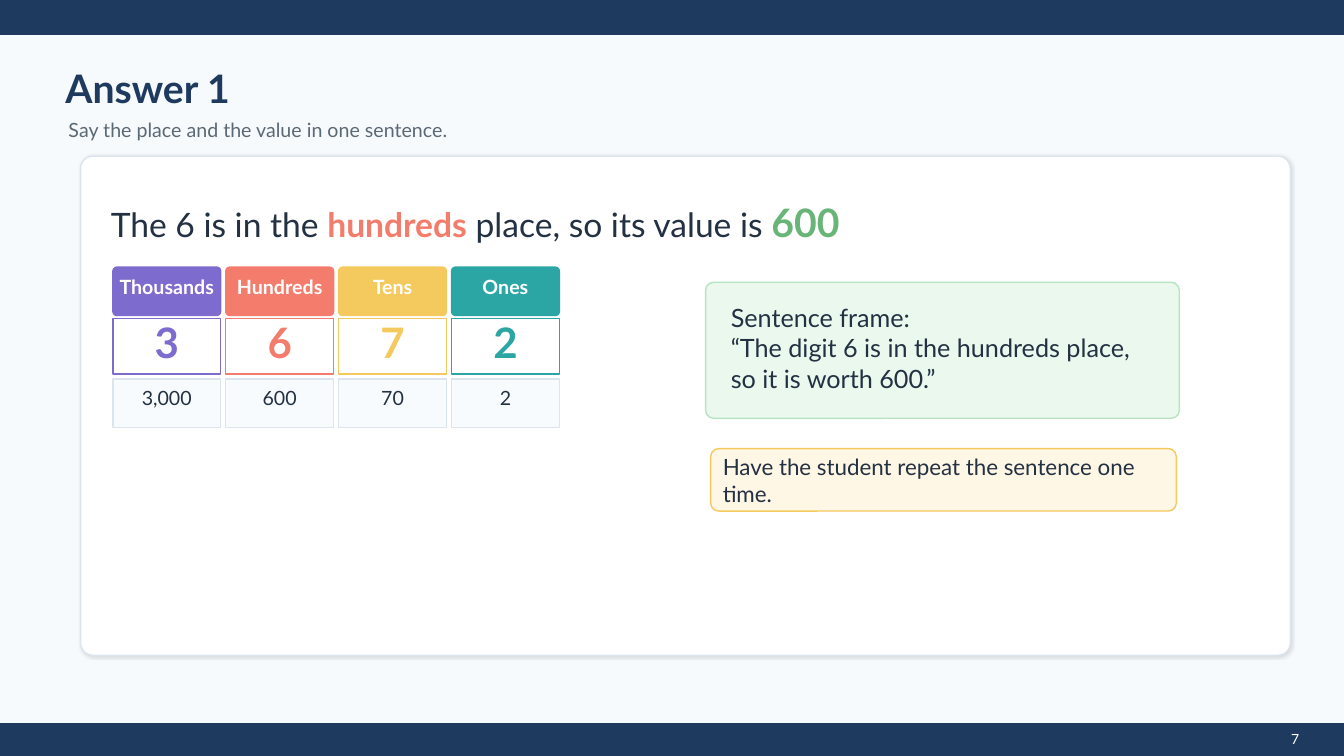
from dataclasses import dataclass

from lxml import etree
from pptx import Presentation
from pptx.dml.color import RGBColor
from pptx.enum.shapes import MSO_SHAPE
from pptx.enum.text import MSO_ANCHOR, PP_ALIGN
from pptx.oxml.ns import qn
from pptx.util import Inches, Pt

RECT, ROUND = MSO_SHAPE.RECTANGLE, MSO_SHAPE.ROUNDED_RECTANGLE
TOP, MIDDLE = MSO_ANCHOR.TOP, MSO_ANCHOR.MIDDLE
LEFT, CENTER = PP_ALIGN.LEFT, PP_ALIGN.CENTER

CELL = Inches(0.1)
COLS, ROWS = 133.33, 75
NAVY, INK, GRAY, WHITE = "1F3A5F", "233142", "5B6975", "FFFFFF"
EDGE, GREEN, CORAL, YELLOW = "DCE5EE", "69B578", "F47C6C", "F4C95D"


@dataclass(frozen=True)
class Box:
    col: float
    row: float
    cols: float
    rows: float

    def emu(self) -> list[int]:
        return [round(n * CELL) for n in (self.col, self.row, self.cols, self.rows)]


@dataclass(frozen=True)
class Run:
    text: str
    size: float
    color: str = INK
    bold: bool = False


@dataclass(frozen=True)
class Place:
    name: str
    digit: str
    value: str
    color: str


PLACES = [
    Place("Thousands", "3", "3,000", "7D6BCE"),
    Place("Hundreds", "6", "600", CORAL),
    Place("Tens", "7", "70", YELLOW),
    Place("Ones", "2", "2", "2CA6A4"),
]
PLACE_LEFT, PLACE_STEP, PLACE_WIDTH = 11.2, 11.2, 10.7


def rgb(color: str) -> RGBColor:
    return RGBColor.from_string(color)


def add_panel(s, box: Box, fill: str, line: str, radius: float = 0):
    sp = s.shapes.add_shape(ROUND if radius else RECT, *box.emu())
    sp.shadow.inherit = False
    sp.fill.solid()
    sp.fill.fore_color.rgb = rgb(fill)
    sp.line.color.rgb = rgb(line)
    sp.line.width = Pt(1)
    if radius:
        sp.adjustments[0] = radius / min(box.cols, box.rows)
    return sp


def add_text(s, box: Box, *paragraphs: list[Run], align=LEFT, anchor=MIDDLE,
             inset: tuple[float, float] = (0, 0)) -> None:
    tf = s.shapes.add_textbox(*box.emu()).text_frame
    across, down = (round(n * CELL) for n in inset)
    frame = {"word_wrap": True, "vertical_anchor": anchor,
             "margin_left": across, "margin_right": across,
             "margin_top": down, "margin_bottom": down}
    for name, value in frame.items():
        setattr(tf, name, value)
    for i, runs in enumerate(paragraphs):
        p = tf.add_paragraph() if i else tf.paragraphs[0]
        p.alignment = align
        for run in runs:
            r = p.add_run()
            r.text = run.text
            font = {"name": "Lato", "size": Pt(run.size), "bold": run.bold}
            for name, value in font.items():
                setattr(r.font, name, value)
            r.font.color.rgb = rgb(run.color)


def add_soft_shadow(sp) -> None:
    effects = sp._element.spPr.find(qn("a:effectLst"))
    shadow = etree.SubElement(effects, qn("a:outerShdw"), blurRad=str(Pt(2)),
                              dist=str(Pt(1)), dir=str(45 * 60000),
                              algn="bl", rotWithShape="0")
    tint = etree.SubElement(shadow, qn("a:srgbClr"), val="000000")
    etree.SubElement(tint, qn("a:alpha"), val="12000")


def add_place(s, place: Place, col: float) -> None:
    def row_box(row: float, rows: float) -> Box:
        return Box(col, row, PLACE_WIDTH, rows)

    add_panel(s, row_box(26.5, 4.8), place.color, place.color, 0.4)
    add_text(s, row_box(27.3, 2.2), [Run(place.name, 14, WHITE, True)], align=CENTER)
    add_panel(s, row_box(31.6, 5.5), WHITE, place.color)
    add_text(s, row_box(32.3, 3.2), [Run(place.digit, 30, place.color, True)], align=CENTER)
    add_panel(s, row_box(37.6, 4.8), "F8FBFE", EDGE)
    add_text(s, row_box(38.6, 1.8), [Run(place.value, 14)], align=CENTER)


def main() -> None:
    prs = Presentation()
    prs.slide_width, prs.slide_height = round(COLS * CELL), ROWS * CELL
    s = prs.slides.add_slide(prs.slide_layouts[6])
    s.background.fill.solid()
    s.background.fill.fore_color.rgb = rgb("F7FAFC")

    for row, rows in ((0, 3.4), (71.8, 3.2)):
        add_panel(s, Box(0, row, COLS, rows), NAVY, NAVY)

    add_text(s, Box(6.5, 6.2, 70, 5), [Run("Answer 1", 28, NAVY, True)])
    add_text(s, Box(6.8, 11.5, 82, 2.8),
             [Run("Say the place and the value in one sentence.", 14, GRAY)])

    add_soft_shadow(add_panel(s, Box(8, 15.5, 120, 49.5), WHITE, EDGE, 1.2))
    add_text(s, Box(11, 19.5, 108, 5), [
        Run("The 6 is in the ", 24),
        Run("hundreds", 24, CORAL, True),
        Run(" place, so its value is ", 24),
        Run("600", 28, GREEN, True),
    ])

    for i, place in enumerate(PLACES):
        add_place(s, place, PLACE_LEFT + i * PLACE_STEP)

    add_panel(s, Box(70, 28, 47, 13.5), "EAF8EE", "B8E3C1", 0.8)
    add_text(s, Box(72.5, 30.5, 42, 8),
             [Run("Sentence frame:", 18)],
             [Run("“The digit 6 is in the hundreds place, so it is worth 600.”", 18)])
    add_panel(s, Box(70.5, 44.5, 46.2, 6.2), "FFF7E5", YELLOW, 0.8)
    add_text(s, Box(71.7, 45.3, 43.8, 4.6),
             [Run("Have the student repeat the sentence one time.", 16)])

    add_text(s, Box(126.5, 72, 4, 1.6), [Run("7", 10, WHITE)],
             align=CENTER, anchor=TOP, inset=(1, 0.5))
    prs.save("out.pptx")


if __name__ == "__main__":
    main()
